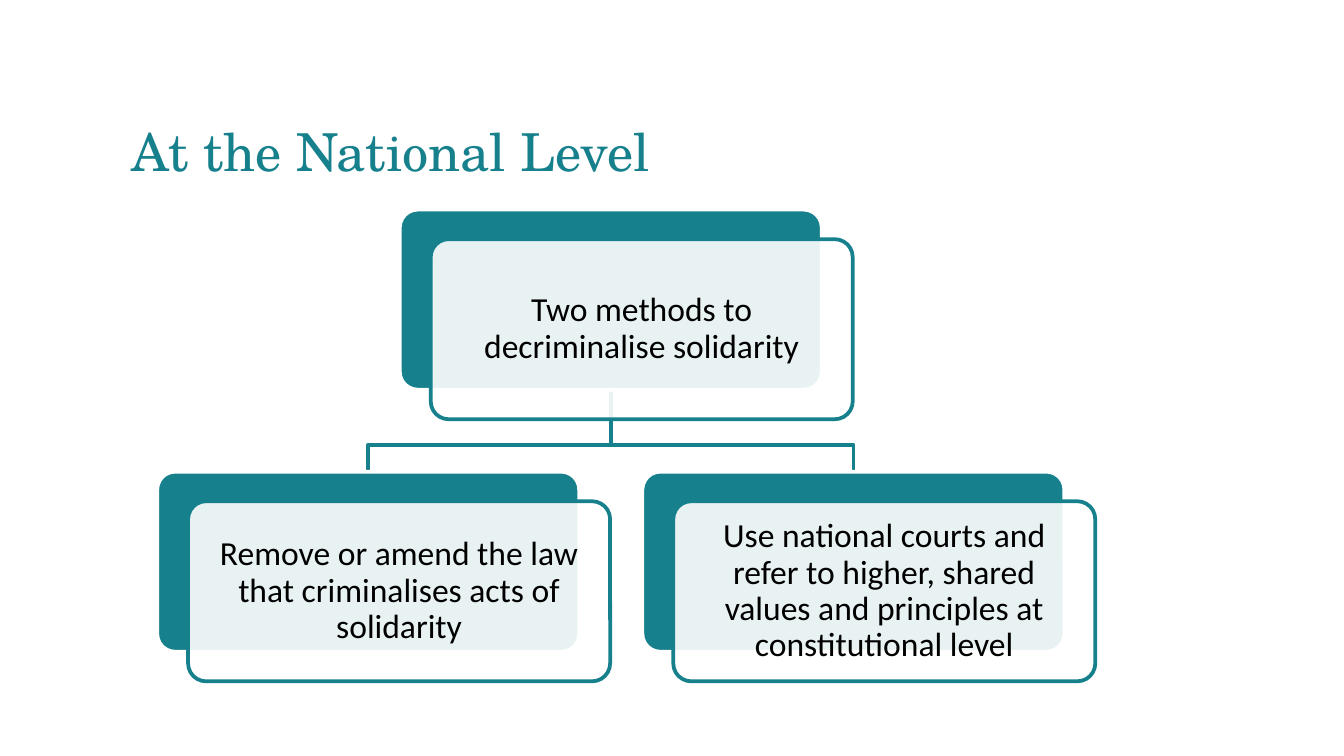
from lxml.etree import SubElement
from pptx import Presentation
from pptx.dml.color import RGBColor
from pptx.enum.shapes import MSO_SHAPE
from pptx.enum.text import MSO_ANCHOR, PP_ALIGN
from pptx.oxml.ns import qn
from pptx.util import Inches, Pt

TITLE = "At the National Level"
ROOT = "Two methods to decriminalise solidarity"
BRANCHES = [
    "Remove or amend the law that criminalises acts of solidarity",
    "Use national courts and refer to higher, shared values and principles at constitutional level",
]
TEAL, WHITE, BLACK = "16818D", "FFFFFF", "000000"

SLIDE_W = 10
SLIDE_H = SLIDE_W * 9 / 16
CARD_W, CARD_H = 3.14, 1.34
LEFT, TOP = 1.17, 1.56
COLUMN, ROW = 3.61, 1.95
OFFSET_X, OFFSET_Y = 0.23, 0.22
BEND = 0.41


def color(value):
    return RGBColor.from_string(value)


def cell(column, row):
    return LEFT + column * COLUMN, TOP + row * ROW


def add_run(paragraph, words, font, size, value):
    run = paragraph.add_run()
    run.text = words
    run.font.name, run.font.size = font, Pt(size)
    run.font.color.rgb = color(value)


def set_line(shape, value):
    shape.shadow.inherit = False
    shape.line.color.rgb = color(value)
    shape.line.width = Pt(2)


def add_panel(slide, x, y, fill, line):
    panel = slide.shapes.add_shape(
        MSO_SHAPE.ROUNDED_RECTANGLE, Inches(x), Inches(y), Inches(CARD_W), Inches(CARD_H))
    panel.adjustments[0] = 0.1
    panel.fill.solid()
    panel.fill.fore_color.rgb = color(fill)
    set_line(panel, line)
    return panel


def add_card(slide, words, column, row):
    x, y = cell(column, row)
    add_panel(slide, x, y, TEAL, WHITE)
    front = add_panel(slide, x + OFFSET_X, y + OFFSET_Y, WHITE, TEAL)
    fill = front.fill._xPr.find(qn("a:solidFill"))
    SubElement(fill[0], qn("a:alpha"), val="90000")
    frame = front.text_frame
    frame.word_wrap = True
    frame.vertical_anchor = MSO_ANCHOR.MIDDLE
    frame.margin_left = frame.margin_right = Inches(0.07)
    frame.margin_top = frame.margin_bottom = Inches(0.07)
    paragraph = frame.paragraphs[0]
    paragraph.alignment = PP_ALIGN.CENTER
    paragraph.line_spacing = 0.9
    add_run(paragraph, words, "Calibri", 18, BLACK)


def add_branch(slide, parent, child):
    (start_x, start_y), (end_x, end_y) = cell(*parent), cell(*child)
    start_x, end_x = start_x + CARD_W / 2, end_x + CARD_W / 2
    start_y += CARD_H
    bend_y = start_y + BEND
    builder = slide.shapes.build_freeform(Inches(start_x), Inches(start_y))
    corners = [(start_x, bend_y), (end_x, bend_y), (end_x, end_y)]
    builder.add_line_segments([(Inches(x), Inches(y)) for x, y in corners], close=False)
    branch = builder.convert_to_shape()
    branch.fill.background()
    set_line(branch, TEAL)


def add_title(slide):
    box = slide.shapes.add_textbox(Inches(0.98), Inches(0.77), Inches(7.29), Inches(0.53))
    frame = box.text_frame
    frame.word_wrap = True
    frame.margin_left = frame.margin_right = frame.margin_top = frame.margin_bottom = 0
    paragraph = frame.paragraphs[0]
    paragraph.line_spacing = Pt(42)
    add_run(paragraph, TITLE, "TeX Gyre Schola", 28, TEAL)


def main():
    """Build the slide with a root card that branches into the methods."""
    deck = Presentation()
    deck.slide_width, deck.slide_height = Inches(SLIDE_W), Inches(SLIDE_H)
    slide = deck.slides.add_slide(deck.slide_layouts[6])
    add_title(slide)
    root = ((len(BRANCHES) - 1) / 2, 0)
    for column in reversed(range(len(BRANCHES))):
        add_branch(slide, root, (column, 1))
    add_card(slide, ROOT, *root)
    for column, words in enumerate(BRANCHES):
        add_card(slide, words, column, 1)
    deck.save("out.pptx")


if __name__ == "__main__":
    main()
